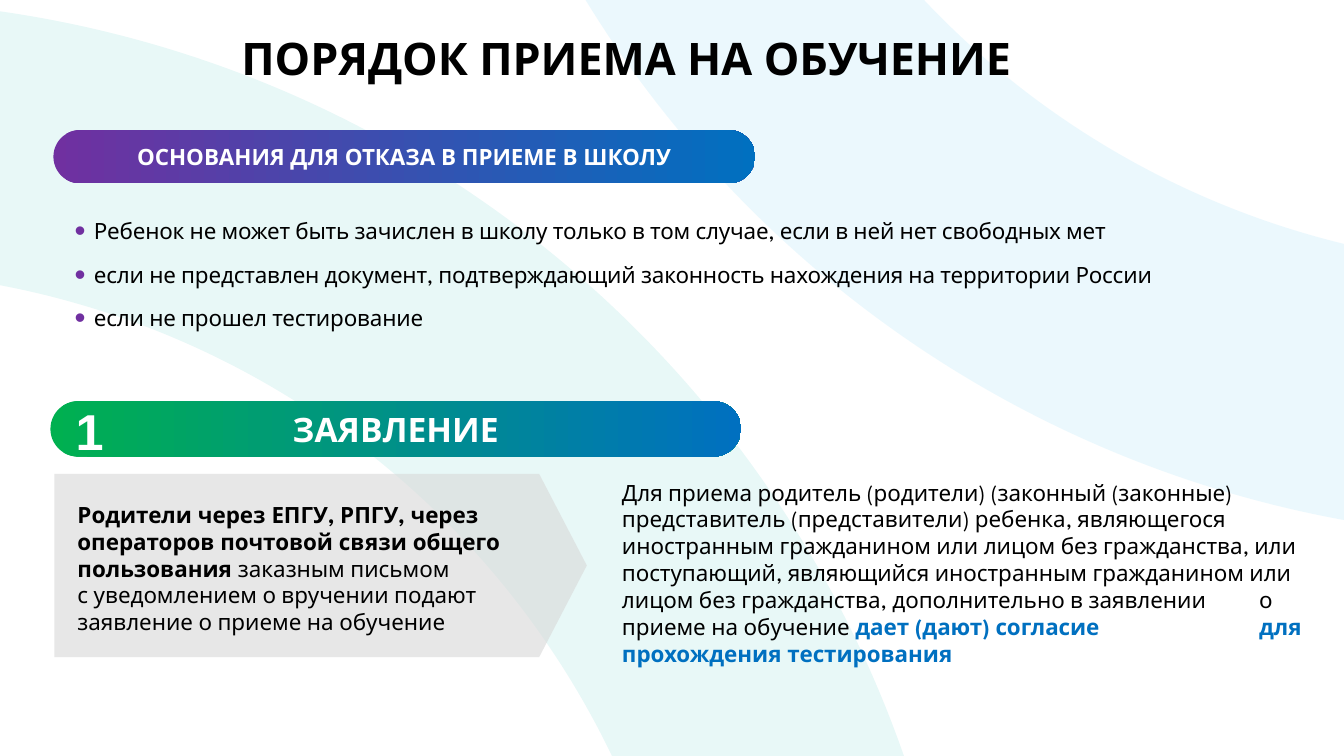
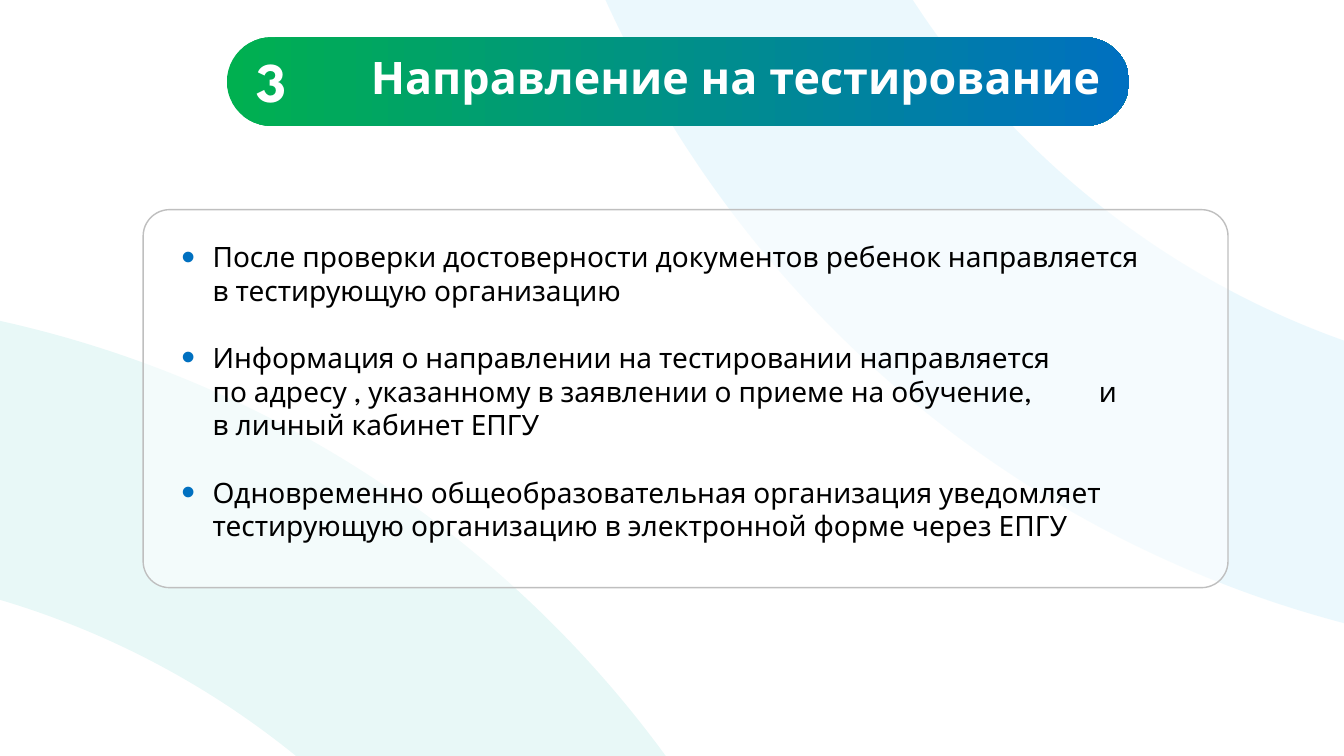
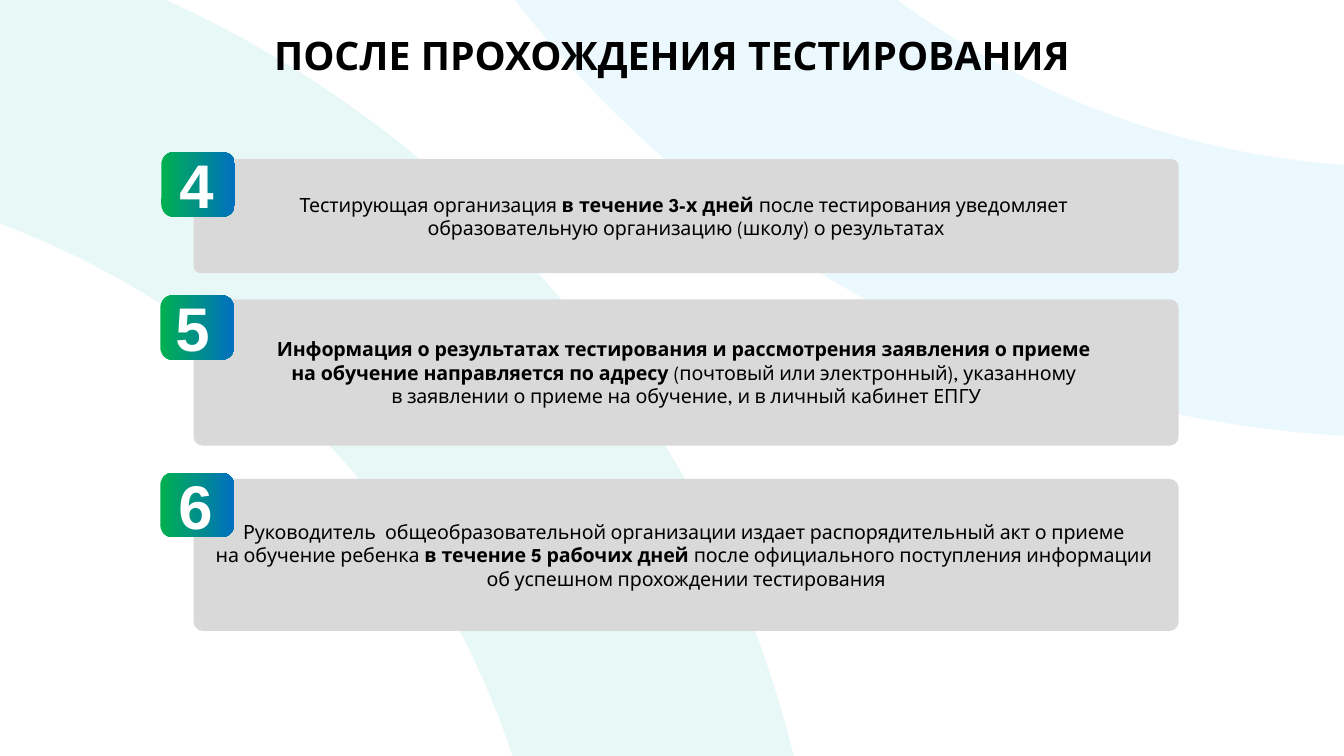
from dataclasses import dataclass, field
from typing import Optional

from lxml import etree
from pptx import Presentation
from pptx.dml.color import RGBColor
from pptx.enum.shapes import MSO_SHAPE
from pptx.enum.text import MSO_ANCHOR, PP_ALIGN
from pptx.oxml.ns import qn
from pptx.util import Inches, Pt

ROUNDED, DONUT, ARROW_BLOCK = (MSO_SHAPE.ROUNDED_RECTANGLE, MSO_SHAPE.DONUT,
                               MSO_SHAPE.PENTAGON)
LEFT, CENTER = PP_ALIGN.LEFT, PP_ALIGN.CENTER
TOP, MIDDLE = MSO_ANCHOR.TOP, MSO_ANCHOR.MIDDLE

Area = tuple[float, float, float, float]
Point = tuple[float, float]


@dataclass(frozen=True)
class Theme:
    font: str = "League Spartan"
    digit_font: str = "Arial"
    black: str = "000000"
    white: str = "FFFFFF"
    grey: str = "D9D9D9"
    outline: str = "BFBFBF"
    blue: str = "0070C0"
    green: str = "00B050"
    purple: str = "7030A0"
    sky: str = "00B0F0"
    teal: str = "00B4B1"
    step: int = 14
    body: int = 16
    large: int = 20
    banner: int = 24
    subtitle: int = 28
    title: int = 32
    small_digit: int = 36
    digit: int = 40
    badge_digit: int = 44


THEME = Theme()


@dataclass(frozen=True)
class Span:
    text: str
    bold: bool = False
    color: Optional[str] = None


@dataclass(frozen=True)
class Style:
    """Look of a whole text body."""
    size: int
    color: str = THEME.black
    font: str = THEME.font
    bold: bool = False
    align: PP_ALIGN = LEFT
    anchor: MSO_ANCHOR = TOP
    tight: bool = False
    bullet: Optional[str] = None
    indent: float = 0
    before: float = 0
    tab: float = 0
    margins: Area = (0.1, 0.05, 0.1, 0.05)


@dataclass(frozen=True)
class Step:
    number: str
    top: float
    height: float
    badge: Point
    digit_left: float
    lines: list[list[Span]] = field(default_factory=list)


def rgb(color: str) -> RGBColor:
    return RGBColor.from_string(color)


def add_xml(parent, tag: str, **attributes: str):
    return etree.SubElement(parent, qn(tag), attributes)


def format_paragraph(para, style: Style, first: bool) -> None:
    para.alignment = style.align
    if style.before and not first:
        para.space_before = Pt(style.before)
    settings = para._p.get_or_add_pPr()
    if style.bullet:
        settings.set("marL", str(Inches(style.indent)))
        settings.set("indent", str(-Inches(style.indent)))
        add_xml(add_xml(settings, "a:buClr"), "a:srgbClr", val=style.bullet)
        add_xml(settings, "a:buSzPct", val="140000")
        add_xml(settings, "a:buFont", typeface="Arial")
        add_xml(settings, "a:buChar", char="•")
    if style.tab:
        add_xml(add_xml(settings, "a:tabLst"), "a:tab",
                pos=str(Inches(style.tab)), algn="l")


def add_span(para, span: Span, style: Style) -> None:
    """Add a span; a newline inside it becomes a line break."""
    for index, piece in enumerate(span.text.split("\n")):
        if index:
            para.add_line_break()
        run = para.add_run()
        run.text = piece
        values = {"name": style.font, "size": Pt(style.size),
                  "bold": style.bold or span.bold}
        for name, value in values.items():
            setattr(run.font, name, value)
        run.font.color.rgb = rgb(span.color or style.color)
        if style.tight:
            run._r.get_or_add_rPr().set("spc", "-10")


def write(box, paragraphs: list[list[Span]], style: Style) -> None:
    frame = box.text_frame
    values = dict(zip(("margin_left", "margin_top", "margin_right", "margin_bottom"),
                      map(Inches, style.margins)))
    values.update(word_wrap=True, vertical_anchor=style.anchor)
    for name, value in values.items():
        setattr(frame, name, value)
    for index, spans in enumerate(paragraphs):
        para = frame.add_paragraph() if index else frame.paragraphs[0]
        format_paragraph(para, style, first=index == 0)
        for span in spans:
            add_span(para, span, style)


def add_text(page, area: Area, paragraphs: list[list[Span]], style: Style) -> None:
    write(page.shapes.add_textbox(*map(Inches, area)), paragraphs, style)


def add_panel(page, kind: MSO_SHAPE, area: Area, adjust: float,
              fill: Optional[str] = None, opacity: int = 100,
              fade_to: Optional[str] = None, line: Optional[str] = None):
    """Preset shape with no, plain, see-through or left-to-right fading fill."""
    panel = page.shapes.add_shape(kind, *map(Inches, area))
    panel.shadow.inherit = False
    panel.adjustments[0] = adjust
    if fill is None:
        panel.fill.background()
    elif fade_to:
        panel.fill.gradient()
        panel.fill.gradient_angle = 0
        for stop, color, position in zip(panel.fill.gradient_stops, (fill, fade_to), (0, 1)):
            stop.color.rgb = rgb(color)
            stop.position = position
    else:
        panel.fill.solid()
        panel.fill.fore_color.rgb = rgb(fill)
        if opacity < 100:
            tint = panel._element.spPr.find(qn("a:solidFill")).find(qn("a:srgbClr"))
            add_xml(tint, "a:alpha", val=str(opacity * 1000))
    if line:
        panel.line.color.rgb = rgb(line)
        panel.line.width = Pt(1)
    else:
        panel.line.fill.background()
    return panel


def add_banner(page, area: Area, start: str = THEME.green, adjust: float = 0.5):
    return add_panel(page, ROUNDED, area, adjust, start, fade_to=THEME.blue)


def add_page(deck, sky_ring: Point, teal_ring: Point):
    """Blank page with the two pale background rings."""
    page = deck.slides.add_slide(deck.slide_layouts[6])
    for corner, color, opacity in ((sky_ring, THEME.sky, 8), (teal_ring, THEME.teal, 9)):
        add_panel(page, DONUT, (*corner, 22.34, 22.38), 0.12, color, opacity)
    return page


def heading(size: int, **changes) -> Style:
    return Style(size, bold=True, **changes)


def digit_style(size: int) -> Style:
    return heading(size, color=THEME.white, font=THEME.digit_font, align=CENTER)


def build_admission(deck) -> None:
    page = add_page(deck, (4.16, -17.04), (-12.75, 0))
    add_panel(page, ARROW_BLOCK, (0.54, 4.7, 5.28, 1.82), 0.26, THEME.grey, 61)
    add_text(page, (0.79, 0.28, 10.96, 0.55), [[Span("ПОРЯДОК ПРИЕМА НА ОБУЧЕНИЕ ")]],
             heading(THEME.title, align=CENTER, tight=True, margins=(0, 0.02, 0, 0)))

    # Section banners
    for area, start, size, label in (
            ((0.53, 1.29, 6.96, 0.53), THEME.purple, THEME.body,
             "ОСНОВАНИЯ ДЛЯ ОТКАЗА В ПРИЕМЕ В ШКОЛУ"),
            ((0.5, 3.98, 6.85, 0.55), THEME.green, THEME.banner, "ЗАЯВЛЕНИЕ")):
        write(add_banner(page, area, start), [[Span(label)]],
              heading(size, color=THEME.white, align=CENTER, anchor=MIDDLE))
    add_text(page, (0.59, 3.92, 0.6, 0.71), [[Span("1")]], digit_style(THEME.small_digit))

    # Reasons for refusal
    reasons = (
        "Ребенок не может быть зачислен в школу только в том случае, если в ней нет свободных мет",
        "если не представлен документ, подтверждающий законность нахождения на территории России",
        "если не прошел тестирование",
    )
    write(add_panel(page, ROUNDED, (0.61, 1.77, 11.81, 1.9), 0.06),
          [[Span(reason)] for reason in reasons],
          Style(THEME.body, anchor=MIDDLE, tight=True, bullet=THEME.purple,
                indent=0.19, before=12))

    # Application details
    add_text(page, (0.67, 4.92, 4.83, 1.45), [
        [Span("Родители через ЕПГУ, РПГУ, через операторов почтовой связи общего пользования ",
              bold=True), Span("заказным письмом")],
        [Span("с уведомлением о вручении подают заявление о приеме на обучение")],
    ], Style(THEME.body))
    add_text(page, (6.07, 4.7, 7, 1.99), [[
        Span("Для приема родитель (родители) (законный (законные) представитель "
             "(представители) ребенка, являющегося иностранным гражданином или лицом без "
             "гражданства, или поступающий, являющийся иностранным гражданином или лицом без "
             "гражданства, дополнительно в заявлении\tо приеме на обучение "),
        Span("дает (дают) согласие\tдля прохождения тестирования", bold=True, color=THEME.blue),
    ]], Style(THEME.body, tab=6.32))


def build_referral(deck) -> None:
    page = add_page(deck, (5, -15.83), (-13.58, 2.92))

    # Numbered heading
    add_banner(page, (2.25, 0.37, 8.95, 0.88))
    add_text(page, (3.58, 0.44, 8.42, 0.64), [[Span("Направление на тестирование")]],
             heading(THEME.title, color=THEME.white))
    add_text(page, (2.45, 0.41, 0.67, 0.77), [[Span("3")]],
             heading(THEME.digit, color=THEME.white))

    # Referral rules
    add_panel(page, ROUNDED, (1.42, 2.08, 10.76, 3.75), 0.07, THEME.white, 50,
              line=THEME.outline)
    rules = (
        "После проверки достоверности документов ребенок направляется в тестирующую организацию",
        "Информация о направлении на тестировании направляется\nпо адресу , указанному "
        "в заявлении о приеме на обучение,\tи\nв личный кабинет ЕПГУ",
        "Одновременно общеобразовательная организация уведомляет тестирующую организацию "
        "в электронной форме через ЕПГУ",
    )
    add_text(page, (1.7, 2.33, 9.8, 3.13), [[Span(rule)] for rule in rules],
             Style(THEME.large, bullet=THEME.blue, indent=0.31, before=24, tab=9.1))


STEPS = (
    Step("4", 1.58, 1.13, (1.6, 1.51), 1.65, [
        [Span("Тестирующая организация "), Span("в течение 3-х дней ", bold=True),
         Span("после тестирования уведомляет ")],
        [Span("образовательную организацию (школу) о результатах")],
    ]),
    Step("5", 2.97, 1.45, (1.59, 2.93), 1.61, [
        [Span("Информация о результатах тестирования и рассмотрения заявления о приеме ",
              bold=True)],
        [Span("на обучение направляется по адресу ", bold=True),
         Span("(почтовый или электронный), указанному ")],
        [Span("в заявлении о приеме на обучение, и в личный кабинет ЕПГУ")],
    ]),
    Step("6", 4.75, 1.51, (1.59, 4.69), 1.64, [
        [Span("Руководитель  общеобразовательной организации издает распорядительный акт "
              "о приеме ")],
        [Span("на обучение ребенка "), Span("в течение 5 рабочих дней ", bold=True),
         Span("после официального поступления информации ")],
        [Span("об успешном прохождении тестирования")],
    ]),
)


def add_step(page, step: Step) -> None:
    card = add_panel(page, ROUNDED, (1.92, step.top, 9.77, step.height), 0.06, THEME.grey)
    write(card, step.lines, Style(THEME.step, align=CENTER, anchor=MIDDLE, tight=True))
    add_banner(page, (*step.badge, 0.73, 0.64), adjust=0.19)
    add_text(page, (step.digit_left, step.badge[1] - 0.1, 0.6, 0.84),
             [[Span(step.number)]], digit_style(THEME.badge_digit))


def build_after_test(deck) -> None:
    page = add_page(deck, (2.77, -18.04), (-14.14, -1))
    add_text(page, (0, 0.26, 13.33, 0.57), [[Span("ПОСЛЕ ПРОХОЖДЕНИЯ ТЕСТИРОВАНИЯ")]],
             heading(THEME.subtitle, align=CENTER))
    for step in STEPS:
        add_step(page, step)


def main() -> None:
    deck = Presentation()
    deck.slide_width, deck.slide_height = Inches(13.33), Inches(7.5)
    for build in (build_admission, build_referral, build_after_test):
        build(deck)
    deck.save("out.pptx")


if __name__ == "__main__":
    main()
